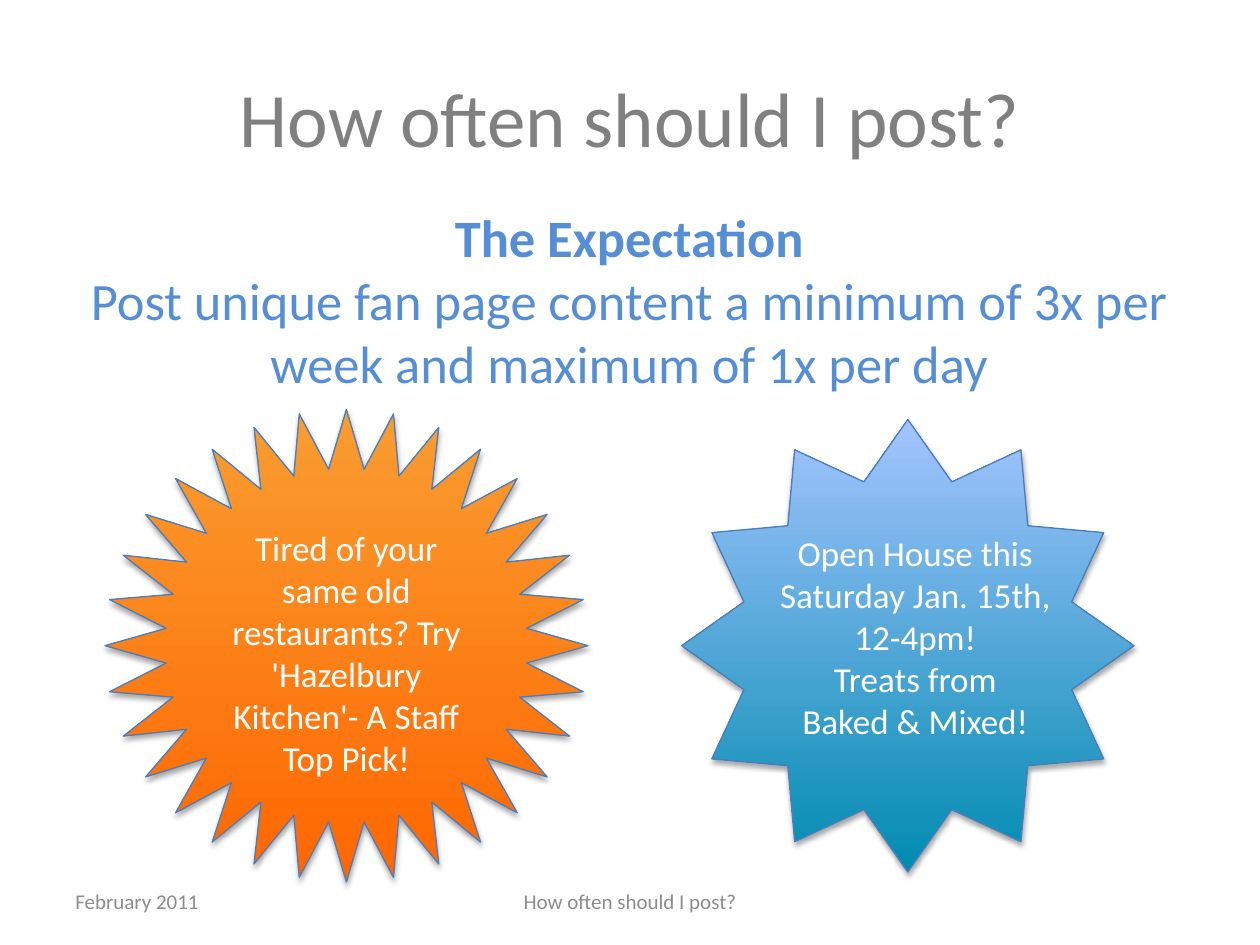
from dataclasses import dataclass

from lxml.etree import SubElement
from pptx import Presentation
from pptx.dml.color import RGBColor
from pptx.enum.shapes import MSO_SHAPE
from pptx.enum.text import MSO_ANCHOR, PP_ALIGN
from pptx.oxml.ns import qn
from pptx.util import Inches, Pt


@dataclass(frozen=True)
class Theme:
    font: str = "Calibri"
    title: str = "808080"
    accent: str = "558ED5"
    footer: str = "8C8C8C"
    light: str = "FFFFFF"
    outline: str = "4B7EBC"
    shadow: str = "000000"
    orange: tuple[str, str] = ("FF6600", "F99D31")
    blue: tuple[str, str] = ("008BB0", "A4C4FF")
    title_size: int = 44
    lead_size: int = 30
    star_size: int = 20
    footer_size: int = 12


@dataclass(frozen=True)
class Area:
    """Position and size in percent of the slide's width and height."""
    left: float
    top: float
    width: float
    height: float

    def emu(self) -> tuple[int, int, int, int]:
        return (int(deck.slide_width * self.left / 100),
                int(deck.slide_height * self.top / 100),
                int(deck.slide_width * self.width / 100),
                int(deck.slide_height * self.height / 100))


@dataclass(frozen=True)
class Star:
    preset: MSO_SHAPE
    area: Area
    gradient: tuple[str, str]  # bottom colour, top colour


THEME = Theme()
deck = Presentation()
deck.slide_width, deck.slide_height = Inches(10), Inches(7.5)
slide = deck.slides.add_slide(deck.slide_layouts[6])


def write(shape, *lines: str, size: int, color: str, align=PP_ALIGN.CENTER,
          anchor=MSO_ANCHOR.TOP, bold_first: bool = False) -> None:
    frame = shape.text_frame
    frame.word_wrap = True
    frame.vertical_anchor = anchor
    for index, line in enumerate(lines):
        paragraph = frame.add_paragraph() if index else frame.paragraphs[0]
        paragraph.alignment = align
        run = paragraph.add_run()
        run.text = line
        run.font.name = THEME.font
        run.font.size = Pt(size)
        run.font.bold = bold_first and index == 0
        run.font.color.rgb = RGBColor.from_string(color)


def add_text(area: Area, *lines: str, **style) -> None:
    write(slide.shapes.add_textbox(*area.emu()), *lines, **style)


def add_soft_shadow(shape) -> None:
    effects = shape._element.spPr.find(qn("a:effectLst"))
    shadow = SubElement(effects, qn("a:outerShdw"), blurRad=str(Pt(3.1)),
                        dist=str(Pt(1.8)), dir="5400000", rotWithShape="0")
    tint = SubElement(shadow, qn("a:srgbClr"), val=THEME.shadow)
    SubElement(tint, qn("a:alpha"), val="35000")


def add_star(star: Star):
    shape = slide.shapes.add_shape(star.preset, *star.area.emu())
    shape.fill.gradient()
    shape.fill.gradient_angle = 90
    for stop, color in zip(shape.fill.gradient_stops, star.gradient):
        stop.color.rgb = RGBColor.from_string(color)
    shape.line.color.rgb = RGBColor.from_string(THEME.outline)
    shape.line.width = Pt(0.75)
    shape.shadow.inherit = False
    add_soft_shadow(shape)
    return shape


# Title and expectation
TOPIC = "How often should I post?"
add_text(Area(5, 4, 90, 16.67), TOPIC, size=THEME.title_size,
         color=THEME.title, anchor=MSO_ANCHOR.MIDDLE)
add_text(Area(4.9, 21.07, 90.1, 21.6), "The Expectation",
         "Post unique fan page content a minimum of 3x per week and maximum of 1x per day",
         size=THEME.lead_size, color=THEME.accent, bold_first=True)

# Example posts
star_text = dict(size=THEME.star_size, color=THEME.light)
restaurant_post = add_star(
    Star(MSO_SHAPE.STAR_32_POINT, Area(8.33, 43.33, 38.33, 50), THEME.orange))
write(restaurant_post,
      "Tired of your same old restaurants? Try 'Hazelbury Kitchen'- A Staff Top Pick!",
      **star_text)
add_star(Star(MSO_SHAPE.STAR_12_POINT, Area(54.1, 44.4, 35.9, 47.87), THEME.blue))
add_text(Area(60.8, 55.6, 23.7, 24.53), "Open House this Saturday Jan. 15th, 12-4pm!",
         "Treats from", "Baked & Mixed!", **star_text)

# Footer
footer_text = dict(size=THEME.footer_size, color=THEME.footer, anchor=MSO_ANCHOR.MIDDLE)
add_text(Area(5, 92.67, 23.33, 5.33), "February 2011", align=PP_ALIGN.LEFT, **footer_text)
add_text(Area(34.17, 92.67, 31.67, 5.33), TOPIC, **footer_text)

deck.save("out.pptx")
